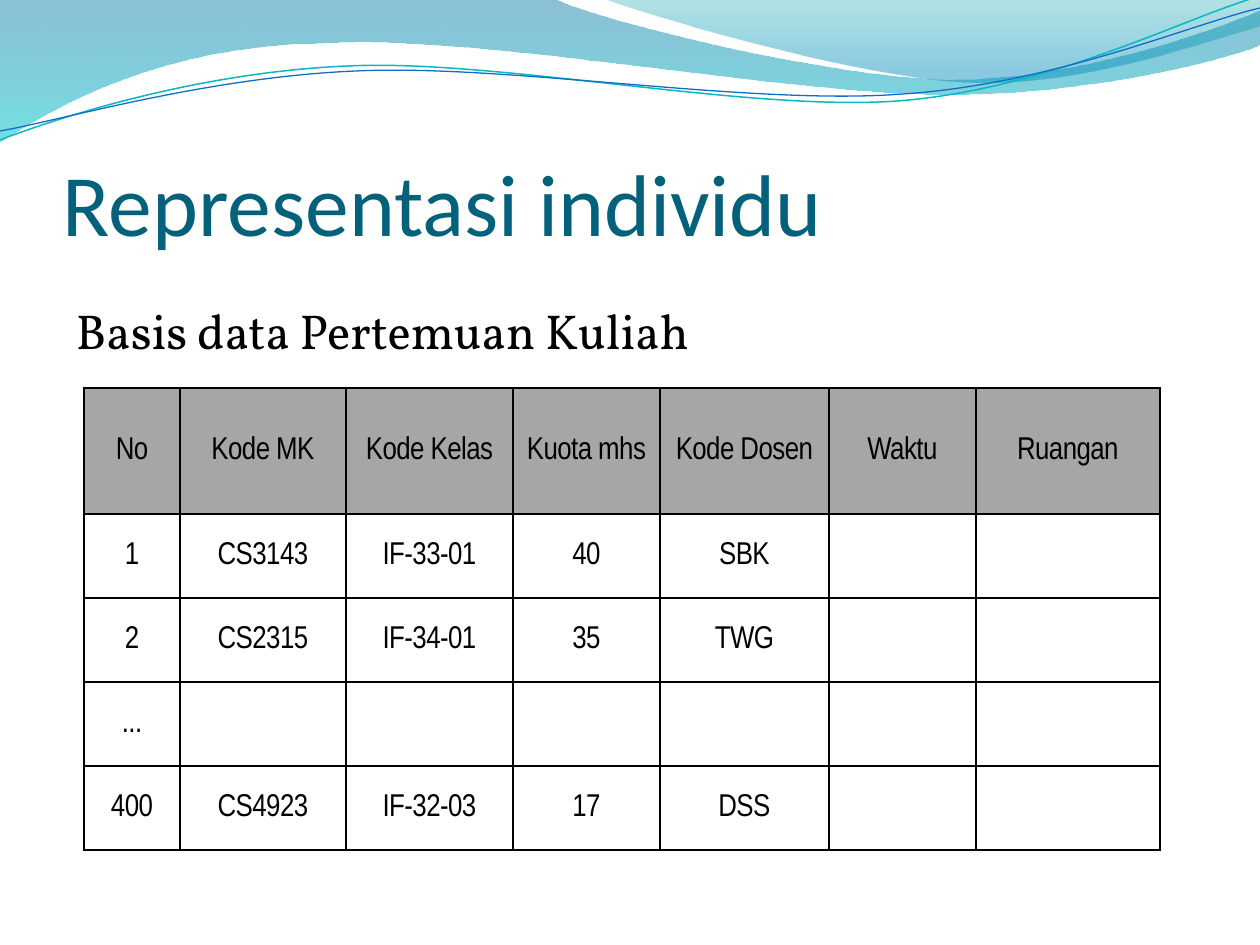
from dataclasses import dataclass
from math import cos, radians, sin

from lxml.etree import SubElement
from pptx import Presentation
from pptx.dml.color import RGBColor
from pptx.enum.text import MSO_ANCHOR, MSO_AUTO_SIZE, PP_ALIGN
from pptx.oxml.ns import qn
from pptx.util import Pt

SCALE = 914400 / 126  # EMU per px
TILT = 357.3


@dataclass
class Band:
    box: tuple
    start: tuple
    steps: list  # (x, y) is a line, (x1, y1, x2, y2, x, y) a curve
    stops: list  # (position, colour, opacity in percent)


@dataclass
class Wave:
    box: tuple
    start: tuple
    steps: list
    color: str
    width: float


@dataclass
class Label:
    text: str
    box: tuple
    inset: tuple
    font: str
    size: int
    color: str
    anchor: MSO_ANCHOR
    fit: MSO_AUTO_SIZE


BANDS = [
    Band((-1, -1, 1262, 143), (0, 0),
         [(554, -1), (600, 21, 837, 79, 955, 79),
          (1075, 79, 1207, 33, 1260, 11), (1261, 45),
          (1239, 55, 1096, 96, 940, 94), (784, 94, 481, 35, 324, 43),
          (163, 45, 58, 105, -1, 142), (0, 0)],
         [(0, "0074A1", 45), (1, "00C6CF", 55)]),
    Band((604, -1, 656, 88), (604, -1),
         [(641, 14, 859, 78, 969, 82), (1079, 87, 1211, 40, 1260, 26),
          (1260, 0), (604, -1)],
         [(0, "00A1A9", 30), (0.8, "008BBF", 45)]),
]
WAVES = [
    Wave((-3, 28, 1263, 89), (0, 140),
         [(60, 117, 199, 72, 349, 66), (498, 59, 747, 112, 898, 101),
          (1050, 89, 1182, 19, 1257, -3)], "0AB8BF", 0.85),
    Wave((-3, 38, 1264, 73), (0, 131),
         [(59, 121, 207, 77, 357, 71), (508, 64, 752, 106, 903, 94),
          (1053, 84, 1186, 26, 1260, 8)], "0F6FC6", 0.75),
]
LABELS = [
    Label("Representasi individu", (63, 97, 1134, 157), (0, 6, 0, 0),
          "Calibri", 50, "04617B", MSO_ANCHOR.BOTTOM, MSO_AUTO_SIZE.NONE),
    Label("Basis data Pertemuan Kuliah", (63, 294, 1081, 72), (13, 6, 13, 6),
          "Vollkorn", 28, "000000", MSO_ANCHOR.TOP,
          MSO_AUTO_SIZE.SHAPE_TO_FIT_TEXT),
]
COLS = [96, 166, 167, 147, 169, 147, 184]
ROWS = [126] + [84] * 4
DATA = [
    ["No", "Kode MK", "Kode Kelas", "Kuota mhs", "Kode Dosen", "Waktu", "Ruangan"],
    ["1", "CS3143", "IF-33-01", "40", "SBK", "", ""],
    ["2", "CS2315", "IF-34-01", "35", "TWG", "", ""],
    ["...", "", "", "", "", "", ""],
    ["400", "CS4923", "IF-32-03", "17", "DSS", "", ""],
]


def px(n: float) -> int:
    return round(n * SCALE)


def rgb(code: str) -> RGBColor:
    return RGBColor.from_string(code)


def spin(x: float, y: float, box: tuple, angle: float) -> tuple:
    """Turn a point clockwise about the centre of the box."""
    left, top, width, height = box
    mid_x, mid_y = left + width / 2, top + height / 2
    c, s = cos(radians(angle)), sin(radians(angle))
    return (mid_x + (x - mid_x) * c - (y - mid_y) * s,
            mid_y + (x - mid_x) * s + (y - mid_y) * c)


def outline(slide, part, close: bool, tilt: float = 0):
    """Build a freeform over its box, then lay lines and curves in it."""
    left, top, width, height = part.box
    right, foot = left + width, top + height
    form = slide.shapes.build_freeform(px(left), px(top))
    form.add_line_segments([(px(right), px(top)), (px(right), px(foot)),
                            (px(left), px(foot))], close=close)
    shape = form.convert_to_shape()
    shape.shadow.inherit = False
    shape.rotation = tilt
    track = next(shape.element.iter(qn("a:path")))
    for old in list(track):
        track.remove(old)
    for i, step in enumerate([part.start] + part.steps):
        tag = "a:cubicBezTo" if len(step) == 6 else "a:lnTo"
        move = SubElement(track, qn(tag if i else "a:moveTo"))
        for pair in zip(step[::2], step[1::2]):
            x, y = spin(*pair, part.box, -tilt)
            SubElement(move, qn("a:pt"), x=str(px(x - left)), y=str(px(y - top)))
    if close:
        SubElement(track, qn("a:close"))
    return shape


def add_band(slide, band: Band) -> None:
    shape = outline(slide, band, True)
    shape.line.fill.background()
    shape.fill.gradient()
    shape.fill.gradient_angle = 270
    for stop, (place, color, _) in zip(shape.fill.gradient_stops, band.stops):
        stop.position = place
        stop.color.rgb = rgb(color)
    marks = shape.element.iter(qn("a:gs"))
    for mark, (_, _, alpha) in zip(marks, band.stops):
        SubElement(mark[0], qn("a:alpha"), val=str(alpha * 1000))


def add_wave(slide, wave: Wave) -> None:
    shape = outline(slide, wave, False, TILT)
    shape.fill.background()
    shape.line.color.rgb = rgb(wave.color)
    shape.line.width = Pt(wave.width)


def add_label(slide, label: Label) -> None:
    frame = slide.shapes.add_textbox(*map(px, label.box)).text_frame
    frame.word_wrap = True
    frame.auto_size = label.fit
    frame.vertical_anchor = label.anchor
    (frame.margin_left, frame.margin_top,
     frame.margin_right, frame.margin_bottom) = map(px, label.inset)
    para = frame.paragraphs[0]
    para.text = label.text
    para.font.name, para.font.size = label.font, Pt(label.size)
    para.font.color.rgb = rgb(label.color)


def add_edges(cell) -> None:
    props = cell._tc.get_or_add_tcPr()
    for side in "LRTB":
        edge = SubElement(props, qn(f"a:ln{side}"), w=str(Pt(1)))
        fill = SubElement(edge, qn("a:solidFill"))
        SubElement(fill, qn("a:srgbClr"), val="000000")


def fill_cell(cell, text: str, head: bool) -> None:
    add_edges(cell)
    if head:
        cell.fill.solid()
        cell.fill.fore_color.rgb = rgb("A6A6A6")
    else:
        cell.fill.background()
    cell.vertical_anchor = MSO_ANCHOR.MIDDLE
    cell.margin_left = cell.margin_right = px(9)
    cell.margin_top = cell.margin_bottom = 0
    if not text:
        return
    para = cell.text_frame.paragraphs[0]
    para.alignment = PP_ALIGN.CENTER
    para.space_before, para.space_after = Pt(3), Pt(6)
    para.font.name, para.font.size = "Arial Narrow", Pt(18)
    para.font.color.rgb = rgb("000000")
    run = para.add_run()
    run.text = text
    run._r.get_or_add_rPr().set("spc", "-30")


def add_grid(slide) -> None:
    table = slide.shapes.add_table(len(ROWS), len(COLS), px(84), px(388),
                                   px(sum(COLS)), px(sum(ROWS))).table
    table.first_row = table.horz_banding = False
    for col, width in zip(table.columns, COLS):
        col.width = px(width)
    for r, (row, height) in enumerate(zip(table.rows, ROWS)):
        row.height = px(height)
        for cell, text in zip(row.cells, DATA[r]):
            fill_cell(cell, text, r == 0)


def main() -> None:
    deck = Presentation()
    deck.slide_width, deck.slide_height = px(1260), px(945)
    slide = deck.slides.add_slide(deck.slide_layouts[6])
    # Header waves
    for band in BANDS:
        add_band(slide, band)
    for wave in WAVES:
        add_wave(slide, wave)
    # Title, table and caption
    add_label(slide, LABELS[0])
    add_grid(slide)
    add_label(slide, LABELS[1])
    deck.save("out.pptx")


if __name__ == "__main__":
    main()
